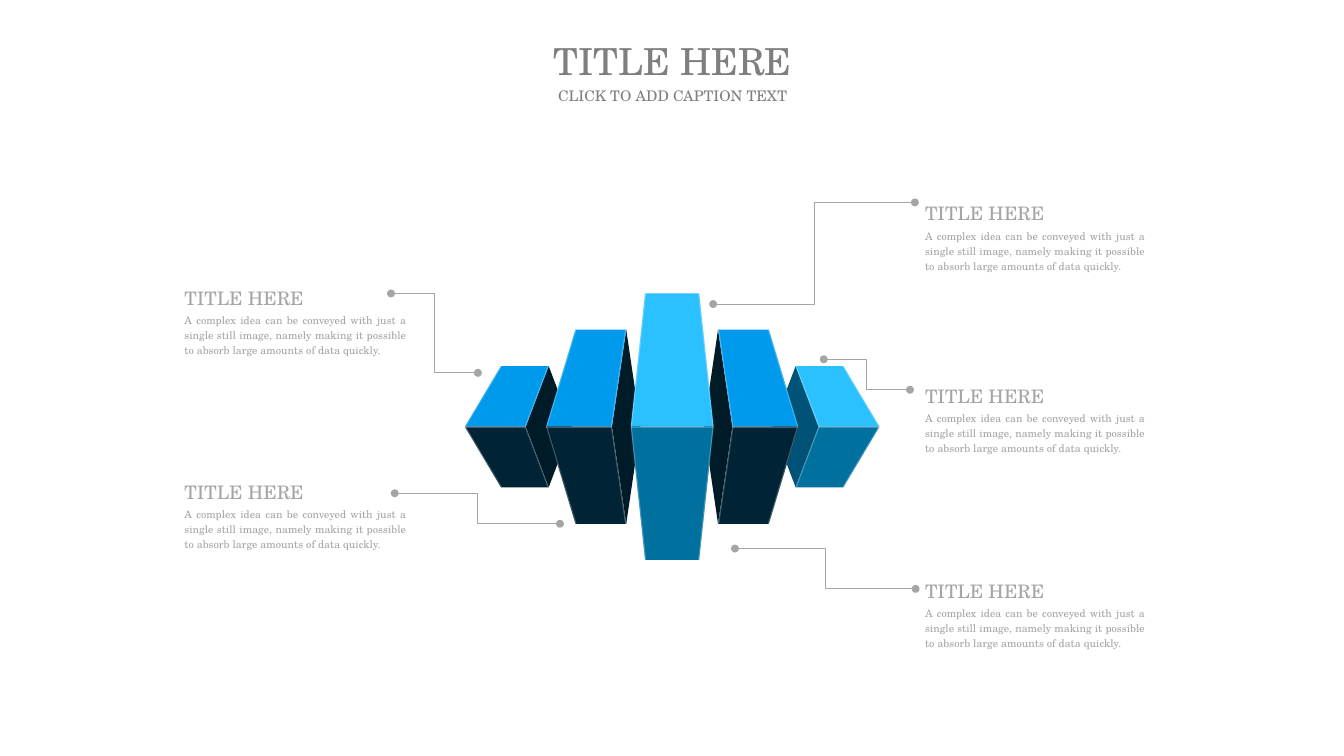
from lxml import etree
from pptx import Presentation
from pptx.dml.color import RGBColor
from pptx.enum.shapes import MSO_CONNECTOR
from pptx.enum.text import MSO_ANCHOR, PP_ALIGN
from pptx.oxml.ns import qn
from pptx.util import Cm, Pt

ELBOW = MSO_CONNECTOR.ELBOW
TOP, MIDDLE = MSO_ANCHOR.TOP, MSO_ANCHOR.MIDDLE
CENTER, JUSTIFY = PP_ALIGN.CENTER, PP_ALIGN.JUSTIFY

FONT = "TeX Gyre Schola"
GREY, DARK_GREY = "A5A5A5", "7F7F7F"
BRIGHT, TEAL, DEEP_TEAL = "2BC0FF", "00709F", "005377"
BLUE, NAVY, DEEP_NAVY = "009AEC", "002436", "001B28"
CENTER_X, HORIZON_Y = 17.86, 11.34
EDGE = 0.03
BODY = ("A complex idea can be conveyed with just a single still image, "
        "namely making it possible to absorb large amounts of data quickly.")


def write(shape, text, size, color=GREY, align=JUSTIFY, anchor=TOP,
          spacing=1.2, margins=(0.25, 0.13)):
    frame = shape.text_frame
    frame.word_wrap = True
    frame.vertical_anchor = anchor
    frame.margin_left = frame.margin_right = Cm(margins[0])
    frame.margin_top = frame.margin_bottom = Cm(margins[1])
    paragraph = frame.paragraphs[0]
    paragraph.alignment = align
    paragraph.line_spacing = spacing
    run = paragraph.add_run()
    run.text = text
    run.font.name = FONT
    run.font.size = Pt(size)
    run.font.color.rgb = RGBColor.from_string(color)


def draw_face(shapes, points, color, opacity=100):
    """Fill a polygon whose points are offsets in cm from the block centre."""
    corners = [(Cm(CENTER_X + x), Cm(HORIZON_Y + y)) for x, y in points]
    builder = shapes.build_freeform(*corners[0], scale=1.0)
    builder.add_line_segments(corners[1:], close=True)
    face = builder.convert_to_shape()
    face.shadow.inherit = False
    face.line.fill.background()
    face.fill.solid()
    face.fill.fore_color.rgb = RGBColor.from_string(color)
    if opacity < 100:
        color_element = face.fill._xPr.find(".//" + qn("a:srgbClr"))
        alpha = etree.SubElement(color_element, qn("a:alpha"))
        alpha.set("val", str(opacity * 1000))


presentation = Presentation()
presentation.slide_width = Cm(35.71)
presentation.slide_height = Cm(20.09)
slide = presentation.slides.add_slide(presentation.slide_layouts[5])

# Blocks: side, front inner, front outer, back inner, back outer, side depth, height
OUTER = (3.89, 5.51, 3.28, 4.55, 2.67, 1.61)
INNER = (1.6, 3.35, 1.22, 2.57, 0.84, 2.58)
side_blocks = [
    (-1, OUTER, BLUE, NAVY, DEEP_NAVY),
    (-1, INNER, BLUE, NAVY, DEEP_NAVY),
    (1, OUTER, BRIGHT, TEAL, DEEP_TEAL),
    (1, INNER, BLUE, NAVY, DEEP_NAVY),
]
CENTER_FRONT, CENTER_BACK, CENTER_HEIGHT = 1.1, 0.72, 3.54

blocks = slide.shapes.add_group_shape().shapes
horizon_edges = [(-CENTER_FRONT, CENTER_FRONT)]
# Edge highlights: front x, back x, height, thickness
slanted_edges = [(side * CENTER_FRONT, side * CENTER_BACK, CENTER_HEIGHT, -side * EDGE)
                 for side in (1, -1)]

for side, sizes, top_color, bottom_color, side_color in side_blocks:
    front_in, front_out, back_in, back_out, depth = [side * x for x in sizes[:5]]
    height = sizes[5]
    draw_face(blocks, [(front_in, 0), (back_in, -height), (depth, 0), (back_in, height)],
              side_color)
    for y, color in ((-height, top_color), (height, bottom_color)):
        draw_face(blocks, [(front_in, 0), (back_in, y), (back_out, y), (front_out, 0)],
                  color)
    horizon_edges.append((front_in, front_out))
    slanted_edges.append((front_out, back_out, height, -side * EDGE))
    slanted_edges.append((front_in, back_in, height, side * EDGE))

for y, color in ((-CENTER_HEIGHT, BRIGHT), (CENTER_HEIGHT, TEAL)):
    draw_face(blocks, [(-CENTER_FRONT, 0), (-CENTER_BACK, y),
                       (CENTER_BACK, y), (CENTER_FRONT, 0)], color)

for start, end in horizon_edges:
    draw_face(blocks, [(start, 0), (end, 0), (end, EDGE), (start, EDGE)], "FFFFFF", 25)
for front, back, height, thickness in slanted_edges:
    draw_face(blocks, [(front, 0), (back, -height), (back + thickness, -height),
                       (front + thickness, 0), (back + thickness, height),
                       (back, height)], "FFFFFF", 25)

# Callouts: left, top, heading width, body width
LEFT_COLUMN, RIGHT_COLUMN = (4.65, 4.19, 6.4), (24.33, 4.14, 6.35)
callouts = [
    (LEFT_COLUMN, 7.37), (LEFT_COLUMN, 12.52),
    (RIGHT_COLUMN, 5.13), (RIGHT_COLUMN, 15.16), (RIGHT_COLUMN, 9.98),
]
for (left, heading_width, body_width), top in callouts:
    body = slide.shapes.add_textbox(Cm(left), Cm(top + 0.77), Cm(body_width), Cm(1.5))
    write(body, BODY, 8)
    heading = slide.shapes.add_textbox(Cm(left), Cm(top), Cm(heading_width), Cm(0.97))
    write(heading, "TITLE HERE", 14)

leaders = [
    (12.7, 9.91, 10.39, 7.8),
    (14.88, 13.92, 10.49, 13.11),
    (24.31, 5.38, 18.95, 8.08),
    (24.18, 10.36, 21.89, 9.55),
    (24.33, 15.65, 19.53, 14.58),
]
for ends in leaders:
    leader = slide.shapes.add_connector(ELBOW, *[Cm(value) for value in ends])
    leader.line.width = Pt(0.75)
    leader.line.color.rgb = RGBColor.from_string(GREY)
    properties = leader._element.spPr
    line = properties.find(qn("a:ln"))
    for tag in ("a:headEnd", "a:tailEnd"):
        etree.SubElement(line, qn(tag)).set("type", "oval")
    etree.SubElement(properties, qn("a:effectLst"))

title = slide.shapes.title
title.left, title.top, title.width, title.height = Cm(14.66), Cm(0.99), Cm(6.43), Cm(1.24)
caption = slide.shapes.add_textbox(Cm(14.66), Cm(2.29), Cm(6.43), Cm(0.48))
for shape, text, size in ((title, "TITLE HERE", 28),
                          (caption, "CLICK TO ADD CAPTION TEXT", 11)):
    write(shape, text, size, color=DARK_GREY, align=CENTER, anchor=MIDDLE,
          spacing=1.0, margins=(0, 0))

presentation.save("out.pptx")
